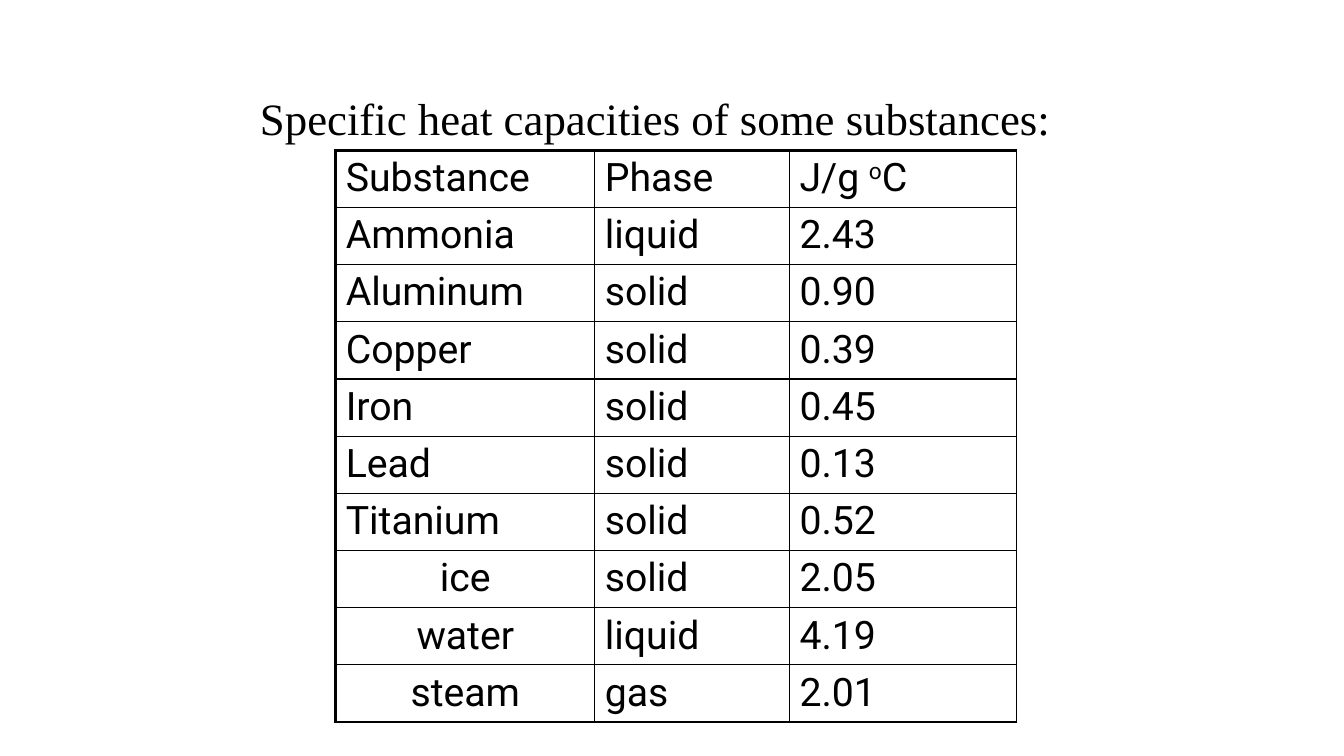
"""Build a slide with a table of specific heat capacities."""
from lxml.etree import SubElement
from pptx import Presentation
from pptx.dml.color import RGBColor as Color
from pptx.enum.text import MSO_AUTO_SIZE as AutoSize, PP_ALIGN as Align
from pptx.oxml.ns import qn
from pptx.util import Inches, Pt

THEME = {
    "ink": "000000",
    "title_font": "Times New Roman",
    "title_size": 32,
    "table_font": "Roboto",
    "table_size": 28,
    "thin": 1,
    "thick": 2.25,
}
COLUMN_WIDTHS = [2.57, 1.93, 2.25]
ROW_HEIGHT = 0.567
ROWS = [
    ("Substance", "Phase", "J/g ^o^C"),
    ("Ammonia", "liquid", "2.43"),
    ("Aluminum", "solid", "0.90"),
    ("Copper", "solid", "0.39"),
    ("Iron", "solid", "0.45"),
    ("Lead", "solid", "0.13"),
    ("Titanium", "solid", "0.52"),
    ("ice", "solid", "2.05"),
    ("water", "liquid", "4.19"),
    ("steam", "gas", "2.01"),
]
WATER_PHASES = {"ice", "water", "steam"}


def write(paragraph, text, font, size, align=Align.LEFT):
    """Write text into a paragraph, raising the parts between carets."""
    paragraph.alignment = align
    for index, part in enumerate(text.split("^")):
        run = paragraph.add_run()
        run.text = part
        run.font.name = font
        run.font.size = Pt(size)
        run.font.color.rgb = Color.from_string(THEME["ink"])
        if index % 2:
            run.font._element.set("baseline", "30000")


def add_border(cell, side, width):
    """Draw one side of a cell."""
    line = SubElement(cell._tc.get_or_add_tcPr(), qn(f"a:ln{side}"), w=str(Pt(width)))
    fill = SubElement(line, qn("a:solidFill"))
    SubElement(fill, qn("a:srgbClr"), val=THEME["ink"])


presentation = Presentation()
presentation.slide_width = Inches(13.33)
presentation.slide_height = Inches(7.5)
slide = presentation.slides.add_slide(presentation.slide_layouts[6])

title = slide.shapes.add_textbox(Inches(2.48), Inches(0.85), Inches(8.05), Inches(0.63))
title.text_frame.word_wrap = False
title.text_frame.auto_size = AutoSize.SHAPE_TO_FIT_TEXT
write(title.text_frame.paragraphs[0], "Specific heat capacities of some substances:",
      font=THEME["title_font"], size=THEME["title_size"])

table = slide.shapes.add_table(
    len(ROWS), len(COLUMN_WIDTHS), Inches(3.33), Inches(1.49),
    Inches(sum(COLUMN_WIDTHS)), Inches(ROW_HEIGHT * len(ROWS))).table
table.first_row = False
table.horz_banding = False
for column, width in zip(table.columns, COLUMN_WIDTHS):
    column.width = Inches(width)

for row_index, values in enumerate(ROWS):
    table.rows[row_index].height = Inches(ROW_HEIGHT)
    for column_index, value in enumerate(values):
        cell = table.cell(row_index, column_index)
        write(cell.text_frame.paragraphs[0], value,
              font=THEME["table_font"], size=THEME["table_size"],
              align=Align.CENTER if value in WATER_PHASES else Align.LEFT)
        thick_sides = {"L": column_index == 0, "R": False,
                       "T": row_index == 0, "B": row_index == len(ROWS) - 1}
        for side, is_thick in thick_sides.items():
            add_border(cell, side, THEME["thick" if is_thick else "thin"])
        cell.fill.background()

presentation.save("out.pptx")
